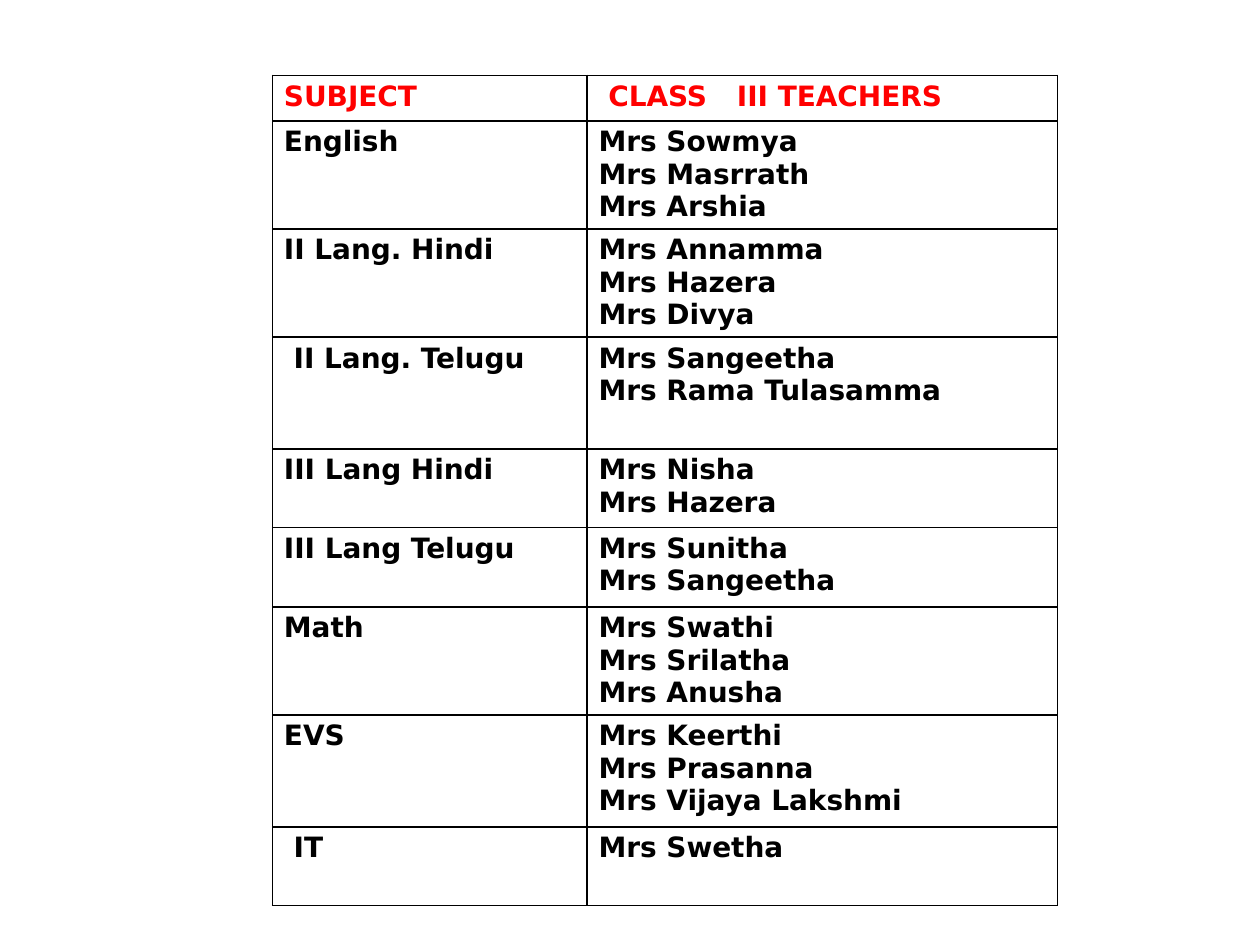
from lxml import etree
from pptx import Presentation
from pptx import util as u
from pptx.dml.color import RGBColor
from pptx.oxml.ns import qn

Pt = u.Pt


def color(value):
    return RGBColor.from_string(value)


def add_borders(cell, value, width):
    properties = cell._tc.get_or_add_tcPr()
    for index, side in enumerate(("lnL", "lnR", "lnT", "lnB")):
        line = etree.Element(qn(f"a:{side}"), w=str(Pt(width)))
        fill = etree.SubElement(line, qn("a:solidFill"))
        etree.SubElement(fill, qn("a:srgbClr"), val=value)
        properties.insert(index, line)


presentation = Presentation()
presentation.slide_width = Pt(720)
presentation.slide_height = Pt(540)
slide = presentation.slides.add_slide(presentation.slide_layouts[6])

space_width = 5.57
header_tab = 73.5
rows = [
    (26, "SUBJECT", ["CLASS\tIII TEACHERS"]),
    (61.7, "English", ["Mrs Sowmya", "Mrs Masrrath", "Mrs Arshia"]),
    (61.9, "II Lang. Hindi", ["Mrs Annamma", "Mrs Hazera", "Mrs Divya"]),
    (64, "II Lang. Telugu", ["Mrs Sangeetha", "Mrs Rama Tulasamma"]),
    (44.8, "III Lang Hindi", ["Mrs Nisha", "Mrs Hazera"]),
    (45.5, "III Lang Telugu", ["Mrs Sunitha", "Mrs Sangeetha"]),
    (61.7, "Math", ["Mrs Swathi", "Mrs Srilatha", "Mrs Anusha"]),
    (64, "EVS", ["Mrs Keerthi", "Mrs Prasanna", "Mrs Vijaya Lakshmi"]),
    (45, "IT", ["Mrs Swetha"]),
]
indented = {"CLASS\tIII TEACHERS", "II Lang. Telugu", "IT"}
column_widths = [179.8, 268.7]
margins = {"margin_left": 6.5, "margin_right": 6.5, "margin_top": 2.9, "margin_bottom": 2.9}

shape = slide.shapes.add_table(
    len(rows), 2, Pt(155.8), Pt(43.1), Pt(sum(column_widths)), Pt(sum(row[0] for row in rows))
)
table = shape.table
for column, width in zip(table.columns, column_widths):
    column.width = Pt(width)

for row_index, (height, subject, teachers) in enumerate(rows):
    table.rows[row_index].height = Pt(height)
    font_format = {"name": "DejaVu Sans", "size": Pt(16), "bold": True}
    font_color = "FF0000" if row_index == 0 else "000000"
    for column_index, lines in enumerate(([subject], teachers)):
        cell = table.cell(row_index, column_index)
        cell.fill.background()
        add_borders(cell, "000000", 1)
        for name, value in margins.items():
            setattr(cell, name, Pt(value))
        if lines[0] in indented:
            cell.margin_left = Pt(margins["margin_left"] + space_width)
        cell.text_frame.text = "\n".join(lines)
        for paragraph in cell.text_frame.paragraphs:
            if "\t" in paragraph.text:
                tabs = etree.SubElement(paragraph._p.get_or_add_pPr(), qn("a:tabLst"))
                etree.SubElement(tabs, qn("a:tab"), pos=str(Pt(header_tab)), algn="l")
            for run in paragraph.runs:
                for name, value in font_format.items():
                    setattr(run.font, name, value)
                run.font.color.rgb = color(font_color)

presentation.save("out.pptx")
